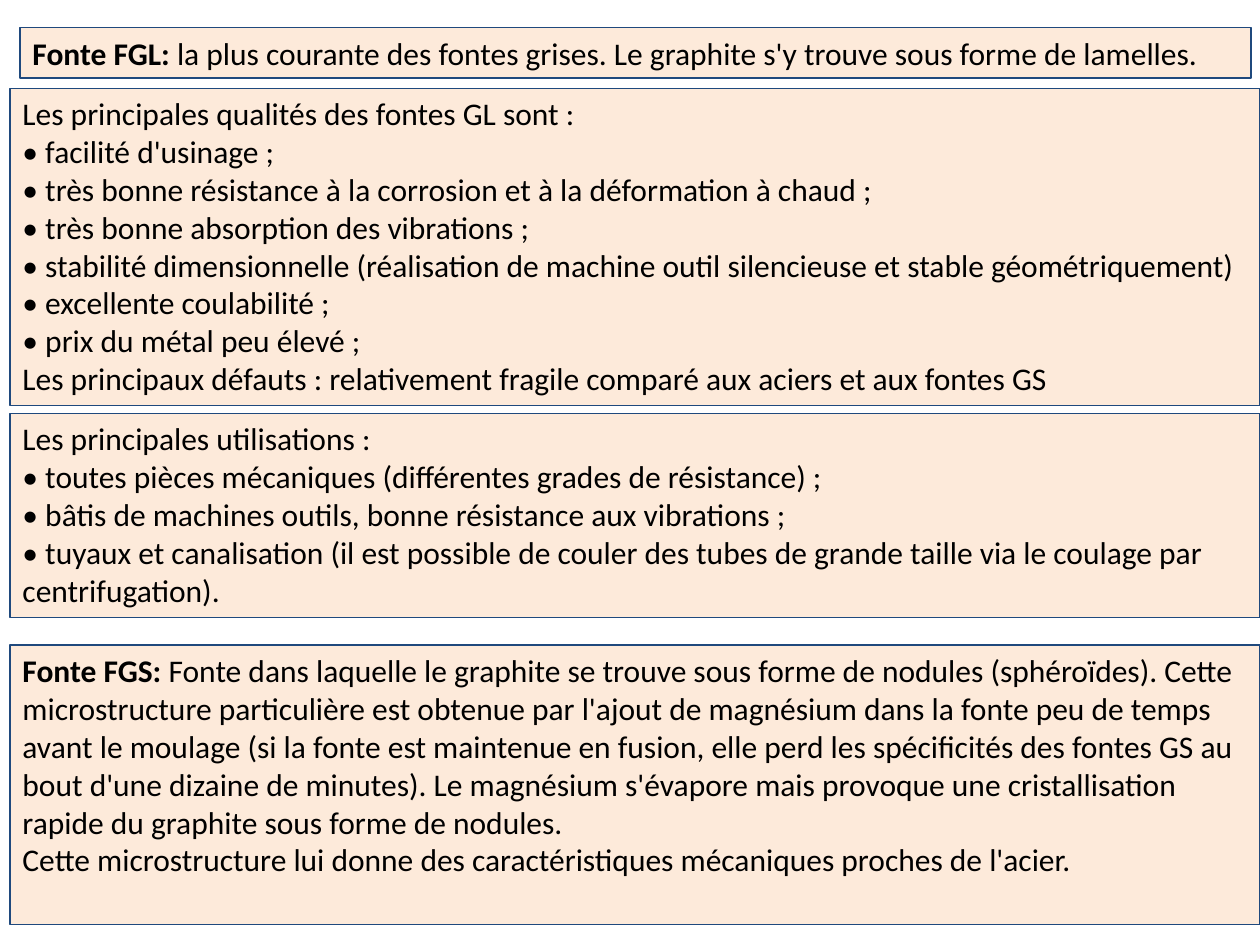
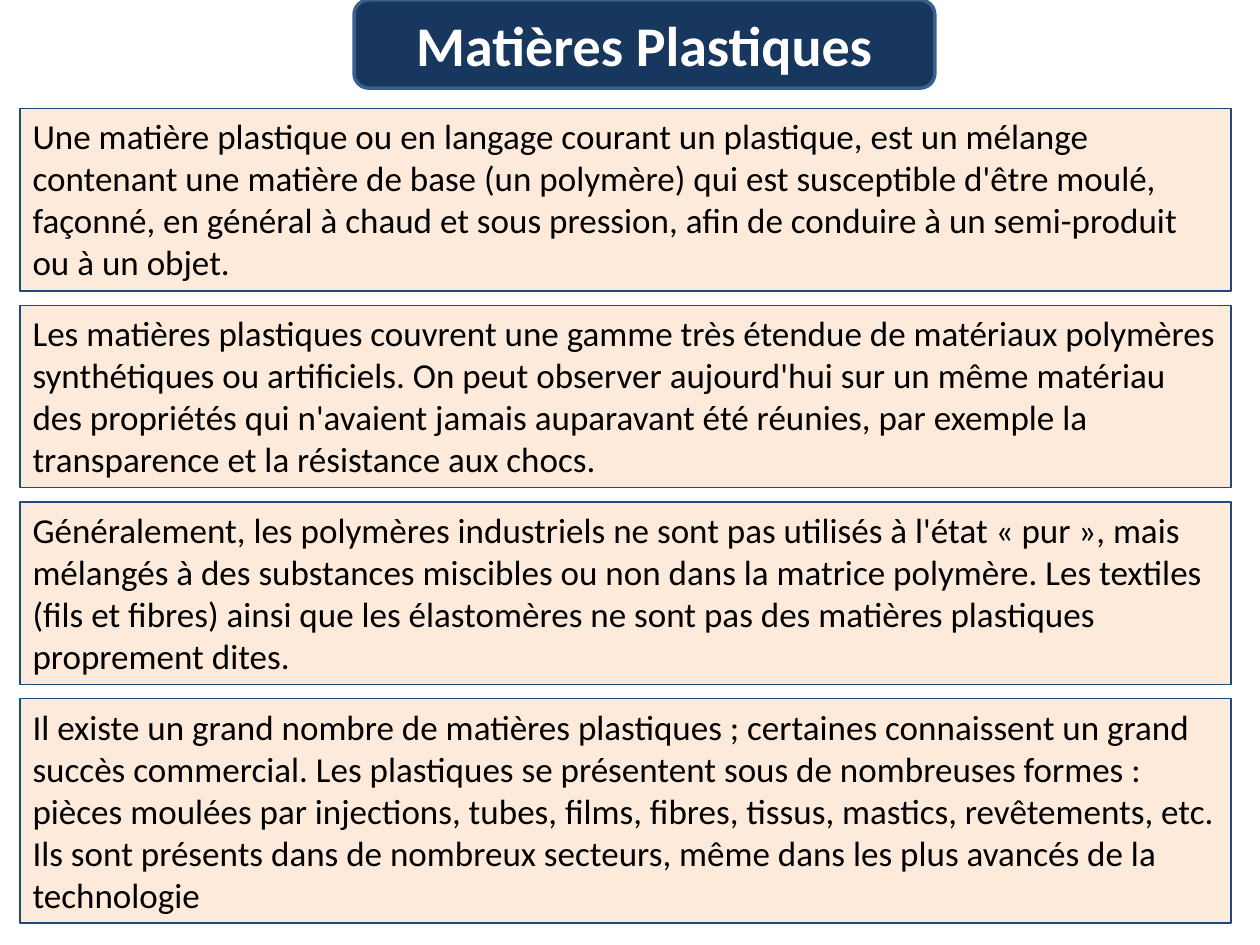
from dataclasses import dataclass

from pptx import Presentation
from pptx.dml.color import RGBColor
from pptx.enum.shapes import MSO_SHAPE
from pptx.enum.text import MSO_ANCHOR, PP_ALIGN
from pptx.slide import Slide
from pptx.util import Inches, Pt

RECT = MSO_SHAPE.RECTANGLE
ROUND = MSO_SHAPE.FLOWCHART_ALTERNATE_PROCESS
TOP, MIDDLE = MSO_ANCHOR.TOP, MSO_ANCHOR.MIDDLE
LEFT, CENTER = PP_ALIGN.LEFT, PP_ALIGN.CENTER

# Shared look
FONT = "Calibri"
PEACH = RGBColor(0xFD, 0xEA, 0xDA)
BLUE = RGBColor(0x1F, 0x49, 0x7D)
NAVY = RGBColor(0x17, 0x37, 0x5E)
STEEL = RGBColor(0x3A, 0x5F, 0x8C)
BLACK = RGBColor(0, 0, 0)
WHITE = RGBColor(0xFF, 0xFF, 0xFF)

# Slide size and its grid of 100 columns by 75 rows
WIDTH, HEIGHT = Inches(10), Inches(7.5)
COL, ROW = WIDTH / 100, HEIGHT / 75


@dataclass(frozen=True)
class Style:
    form: int
    fill: RGBColor
    edge: RGBColor
    line: float
    ink: RGBColor
    size: int
    bold: bool = False
    align: int = LEFT
    anchor: int = TOP


@dataclass(frozen=True)
class Box:
    col: float
    row: float
    cols: float
    rows: float
    text: tuple[str, ...]
    lead: str = ""


TITLE = Style(ROUND, NAVY, STEEL, 2, WHITE, 32, True, CENTER, MIDDLE)
NOTE = Style(RECT, PEACH, BLUE, 0.75, BLACK, 18)
LARGE = Style(RECT, PEACH, BLUE, 0.75, BLACK, 20)

# Slide 1: cast irons
IRONS = (
    Box(1.6, 2.2, 97.7, 4, (
        "la plus courante des fontes grises. Le graphite s'y trouve sous "
        "forme de lamelles.",
    ), "Fonte FGL: "),
    Box(0.8, 7, 99.2, 25.2, (
        """Les principales qualités des fontes GL sont :
• facilité d'usinage ;
• très bonne résistance à la corrosion et à la déformation à chaud ;
• très bonne absorption des vibrations ;
• stabilité dimensionnelle (réalisation de machine outil silencieuse et stable géométriquement)
• excellente coulabilité ;
• prix du métal peu élevé ;""",
        "Les principaux défauts : relativement fragile comparé aux aciers "
        "et aux fontes GS",
    )),
    Box(0.8, 32.8, 99.2, 16.2, (
        """Les principales utilisations :
• toutes pièces mécaniques (différentes grades de résistance) ;
• bâtis de machines outils, bonne résistance aux vibrations ;
• tuyaux et canalisation (il est possible de couler des tubes de grande taille via le coulage par centrifugation).""",
    )),
    Box(0.8, 51.2, 99.2, 22.2, (
        "Fonte dans laquelle le graphite se trouve sous forme de nodules "
        "(sphéroïdes). Cette microstructure particulière est obtenue par "
        "l'ajout de magnésium dans la fonte peu de temps avant le moulage "
        "(si la fonte est maintenue en fusion, elle perd les spécificités "
        "des fontes GS au bout d'une dizaine de minutes). Le magnésium "
        "s'évapore mais provoque une cristallisation rapide du graphite "
        "sous forme de nodules.",
        "Cette microstructure lui donne des caractéristiques mécaniques "
        "proches de l'acier.",
    ), "Fonte FGS: "),
)

# Slide 2: plastics, stacked at an equal step
HEAD = Box(28.1, 0, 46.1, 7, ("Matières Plastiques",))
FIRST, STEP = 8.6, 15.62
PLASTICS = (
    (14.5, """Une matière plastique ou en langage courant un plastique, est un mélange
contenant une matière de base (un polymère) qui est susceptible d'être moulé,
façonné, en général à chaud et sous pression, afin de conduire à un semi-produit ou à un objet."""),
    (14.5, "Les matières plastiques couvrent une gamme très étendue de "
     "matériaux polymères synthétiques ou artificiels. On peut observer "
     "aujourd'hui sur un même matériau des propriétés qui n'avaient jamais "
     "auparavant été réunies, par exemple la transparence et la résistance "
     "aux chocs."),
    (14.5, "Généralement, les polymères industriels ne sont pas utilisés à "
     "l'état « pur », mais mélangés à des substances miscibles ou non dans "
     "la matrice polymère. Les textiles (fils et fibres) ainsi que les "
     "élastomères ne sont pas des matières plastiques proprement dites."),
    (17.8, "Il existe un grand nombre de matières plastiques ; certaines "
     "connaissent un grand succès commercial. Les plastiques se présentent "
     "sous de nombreuses formes : pièces moulées par injections, tubes, "
     "films, fibres, tissus, mastics, revêtements, etc. Ils sont présents "
     "dans de nombreux secteurs, même dans les plus avancés de la "
     "technologie"),
)


def draw(slide: Slide, box: Box, style: Style) -> None:
    """Draw one framed text box."""
    shape = slide.shapes.add_shape(
        style.form, round(box.col * COL), round(box.row * ROW),
        round(box.cols * COL), round(box.rows * ROW))
    shape.shadow.inherit = False
    shape.fill.solid()
    shape.fill.fore_color.rgb = style.fill
    shape.line.color.rgb = style.edge
    shape.line.width = Pt(style.line)

    frame = shape.text_frame
    frame.word_wrap = True
    frame.vertical_anchor = style.anchor
    for spot, text in enumerate(box.text):
        para = frame.add_paragraph() if spot else frame.paragraphs[0]
        para.alignment = style.align
        bold_lead = box.lead and spot == 0
        if bold_lead:
            para.text = box.lead
            para.add_run().text = text
        else:
            para.text = text
        for run in para.runs:
            font = run.font
            font.name, font.size = FONT, Pt(style.size)
            font.bold = style.bold
            font.color.rgb = style.ink
        if bold_lead:
            para.runs[0].font.bold = True


def main() -> None:
    deck = Presentation()
    deck.slide_width, deck.slide_height = WIDTH, HEIGHT
    blank = deck.slide_layouts[6]

    irons = deck.slides.add_slide(blank)
    for box in IRONS:
        draw(irons, box, NOTE)

    plastics = deck.slides.add_slide(blank)
    draw(plastics, HEAD, TITLE)
    for spot, (rows, text) in enumerate(PLASTICS):
        draw(plastics, Box(1.6, FIRST + spot * STEP, 96.1, rows, (text,)), LARGE)

    deck.save("out.pptx")


if __name__ == "__main__":
    main()
